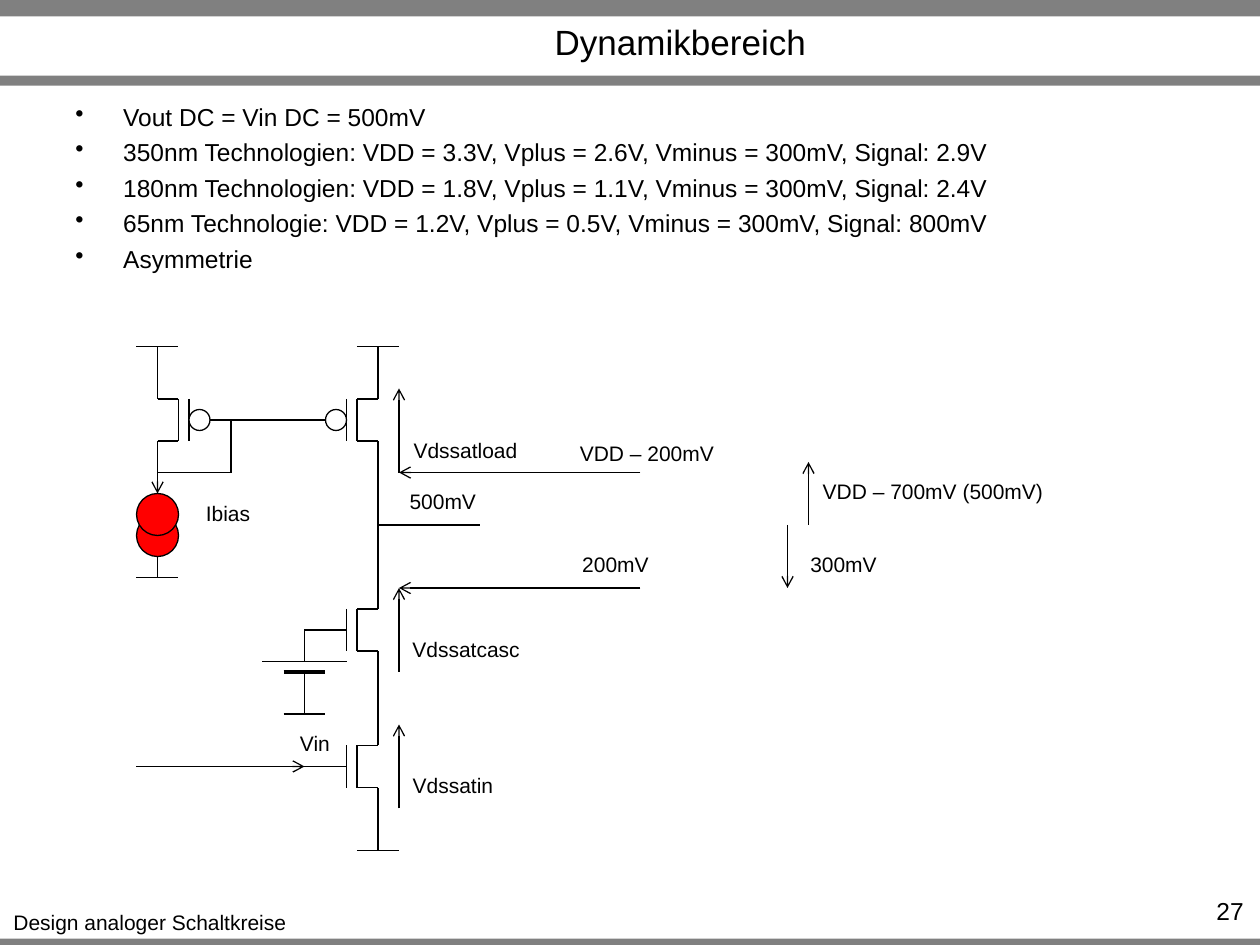
from dataclasses import dataclass

import lxml.etree
import pptx
import pptx.dml.color
import pptx.enum.shapes
import pptx.enum.text
import pptx.oxml.ns
import pptx.util

Inches = pptx.util.Inches
Pt = pptx.util.Pt
Align = pptx.enum.text.PP_ALIGN
Shape = pptx.enum.shapes.MSO_SHAPE
qn = pptx.oxml.ns.qn

COLORS = {"ink": "000000", "bar": "808080", "paper": "FFFFFF", "source": "FF0000"}
GRID = 1 / 12  # circuit coordinates count twelfths of an inch


@dataclass
class Wire:
    x1: float
    y1: float
    x2: float
    y2: float
    width: float = 0.75
    arrow: bool = False


@dataclass
class Transistor:
    """Channel lead at x, gate at y; side is the direction of the gate."""
    x: int
    y: int
    side: int = -1
    inverted: bool = False


@dataclass
class Label:
    text: str
    left: float
    top: float
    width: float


BARS = [(0, 0.13), (0.6, 0.08), (7.45, 0.08)]

BULLETS = [
    "Vout DC = Vin DC = 500mV",
    "350nm Technologien: VDD = 3.3V, Vplus = 2.6V, Vminus = 300mV, Signal: 2.9V",
    "180nm Technologien: VDD = 1.8V, Vplus = 1.1V, Vminus = 300mV, Signal: 2.4V",
    "65nm Technologie: VDD = 1.2V, Vplus = 0.5V, Vminus = 300mV, Signal: 800mV",
    "Asymmetrie",
]

TRANSISTORS = [
    Transistor(15, 40, side=1, inverted=True),
    Transistor(36, 40, inverted=True),
    Transistor(36, 60),
    Transistor(36, 73),
]

WIRES = [
    # supply rails and grounds
    Wire(13, 33, 17, 33), Wire(15, 33, 15, 35),
    Wire(34, 33, 38, 33), Wire(36, 33, 36, 35),
    Wire(13, 55, 17, 55), Wire(15, 53, 15, 55),
    Wire(34, 81, 38, 81), Wire(36, 78, 36, 81),
    # current mirror
    Wire(22, 40, 29, 40), Wire(22, 40, 22, 45), Wire(15, 45, 22, 45),
    # output branch
    Wire(36, 45, 36, 55), Wire(36, 50, 45.7, 50), Wire(36, 65, 36, 68),
    # bias battery of the cascode
    Wire(29, 60, 29, 63), Wire(25, 63, 33, 63), Wire(27, 64, 31, 64, width=2),
    Wire(29, 64, 29, 68), Wire(27, 68, 31, 68),
]

ARROWS = [
    Wire(x1, y1, x2, y2, arrow=True) for x1, y1, x2, y2 in [
        (15, 42, 15, 47), (13, 73, 29, 73),
        (38, 45, 38, 37), (38, 64, 38, 56), (38, 77, 38, 69),
        (61, 45, 38, 45), (61, 56, 38, 56),
        (75, 50, 75, 56), (77, 50, 77, 44),
    ]
]

LABELS = [
    Label("Design analoger Schaltkreise", 0, 7.17, 2.38),
    Label("Ibias", 1.53, 3.92, 0.56),
    Label("Vin", 2.28, 5.75, 0.44),
    Label("500mV", 3.15, 3.83, 0.73),
    Label("Vdssatload", 3.18, 3.42, 1.03),
    Label("Vdssatcasc", 3.17, 5, 1.06),
    Label("Vdssatin", 3.17, 6.08, 0.85),
    Label("VDD – 200mV", 4.5, 3.45, 1.27),
    Label("200mV", 4.52, 4.33, 0.73),
    Label("300mV", 6.33, 4.33, 0.73),
    Label("VDD – 700mV (500mV)", 6.42, 3.75, 1.97),
]


def color(name: str) -> pptx.dml.color.RGBColor:
    return pptx.dml.color.RGBColor.from_string(COLORS[name])


def write(para, text: str, *, size: float = 12, align=Align.CENTER) -> None:
    para.alignment = align
    span = para.add_run()
    span.text = text
    span.font.name = "Arial"
    span.font.size = Pt(size)
    span.font.color.rgb = color("ink")


def add_box(page, left: float, top: float, width: float, height: float, wrap: bool = True):
    box = page.shapes.add_textbox(Inches(left), Inches(top), Inches(width), Inches(height))
    box.text_frame.word_wrap = wrap
    return box.text_frame


def add_solid(page, kind, left: float, top: float, width: float, height: float, fill: str):
    shape = page.shapes.add_shape(kind, Inches(left), Inches(top), Inches(width), Inches(height))
    shape.shadow.inherit = False
    shape.fill.solid()
    shape.fill.fore_color.rgb = color(fill)
    return shape


def add_circle(page, x: float, y: float, radius: float, fill: str) -> None:
    """Draw a circle around a grid point."""
    side = 2 * radius * GRID
    circle = add_solid(page, Shape.OVAL, (x - radius) * GRID, (y - radius) * GRID, side, side, fill)
    circle.line.color.rgb = color("ink")
    circle.line.width = Pt(0.75)


def add_wire(page, wire: Wire) -> None:
    ends = [Inches(step * GRID) for step in (wire.x1, wire.y1, wire.x2, wire.y2)]
    line = page.shapes.add_connector(pptx.enum.shapes.MSO_CONNECTOR.STRAIGHT, *ends)
    line.line.color.rgb = color("ink")
    line.line.width = Pt(wire.width)
    properties = line._element.spPr
    if wire.arrow:
        lxml.etree.SubElement(properties.find(qn("a:ln")), qn("a:tailEnd"), type="arrow")
    lxml.etree.SubElement(properties, qn("a:effectLst"))


def add_transistor(page, part: Transistor) -> None:
    x, y = part.x, part.y
    channel, plate, gate = (x + part.side * step for step in (2, 3, 7))
    for way in (-1, 1):
        add_wire(page, Wire(x, y + 5 * way, x, y + 2 * way))
        add_wire(page, Wire(x, y + 2 * way, channel, y + 2 * way))
    for bar in (channel, plate):
        add_wire(page, Wire(bar, y - 2, bar, y + 2))
    add_wire(page, Wire(gate, y, plate, y))
    if part.inverted:
        add_circle(page, x + 4 * part.side, y, 1, "paper")


def add_bullets(page) -> None:
    frame = add_box(page, 0.5, 0.76, 9, 1.24)
    for index, text in enumerate(BULLETS):
        para = frame.add_paragraph() if index else frame.paragraphs[0]
        indent = Inches(0.38)
        properties = para._p.get_or_add_pPr()
        properties.set("marL", str(indent))
        properties.set("indent", str(-indent))
        lxml.etree.SubElement(properties, qn("a:buChar"), char="•")
        para.space_before = Pt(3.5 if index else 0)
        write(para, text, size=14, align=Align.LEFT)


def main() -> None:
    deck = pptx.Presentation()
    deck.slide_width, deck.slide_height = Inches(10), Inches(7.5)
    page = deck.slides.add_slide(deck.slide_layouts[5])

    for top, height in BARS:
        add_solid(page, Shape.RECTANGLE, 0, top, 10, height, "bar").line.fill.background()

    title = page.shapes.title
    title.left, title.top = Inches(1.3), Inches(0.14)
    title.width, title.height = Inches(8.2), Inches(0.38)
    title.text_frame.vertical_anchor = pptx.enum.text.MSO_ANCHOR.MIDDLE
    write(title.text_frame.paragraphs[0], "Dynamikbereich", size=20)

    add_bullets(page)
    number = add_box(page, 9.1, 7.06, 0.87, 0.24)
    write(number.paragraphs[0], "27", size=14, align=Align.RIGHT)

    for part in TRANSISTORS:
        add_transistor(page, part)
    for wire in WIRES:
        add_wire(page, wire)
    for y in (51, 49):
        add_circle(page, 15, y, 2, "source")
    for arrow in ARROWS:
        add_wire(page, arrow)
    for label in LABELS:
        frame = add_box(page, label.left, label.top, label.width, 0.3, wrap=False)
        write(frame.paragraphs[0], label.text)

    deck.save("out.pptx")


if __name__ == "__main__":
    main()
